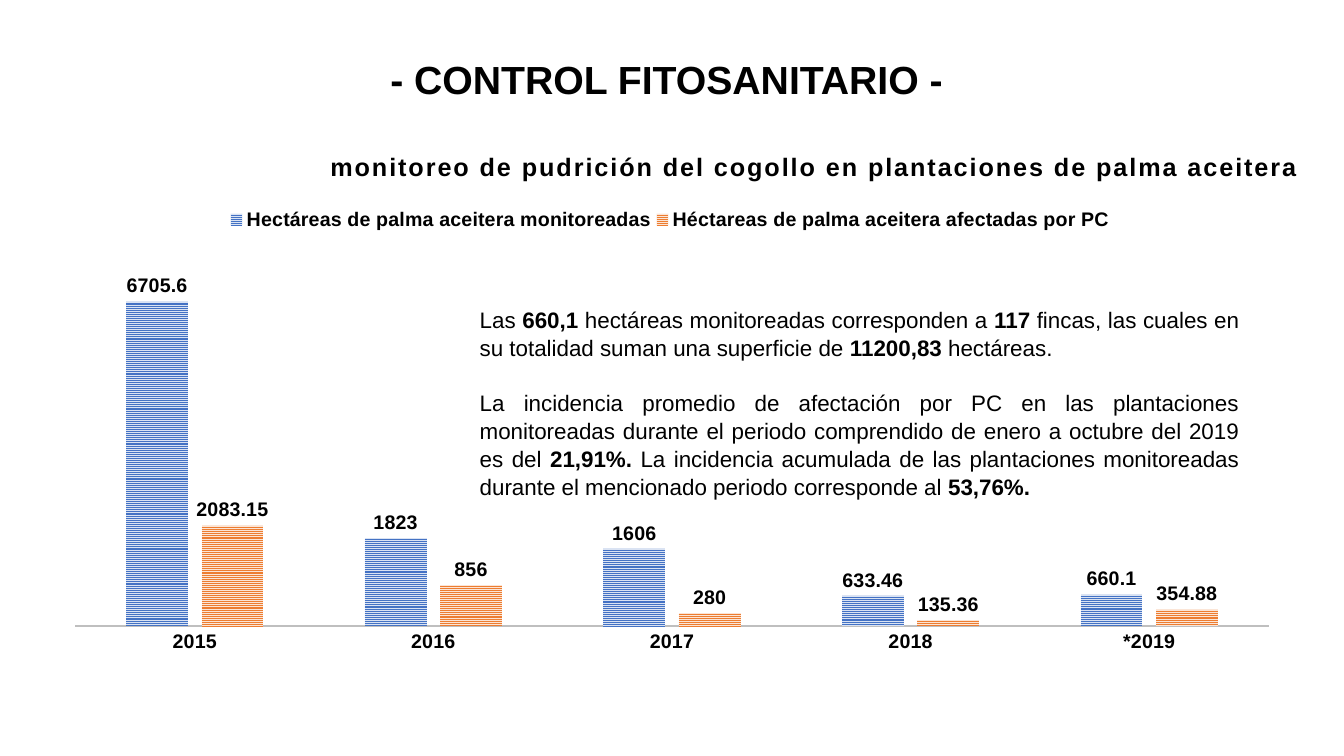
from lxml import etree
from pptx import Presentation
from pptx import util as u
from pptx.chart import data as chart_data
from pptx.dml.color import RGBColor
from pptx.enum import chart as ch, dml, text
from pptx.oxml import ns

BLACK = RGBColor(0x00, 0x00, 0x00)
AXIS_GREY = RGBColor(0xBF, 0xBF, 0xBF)
BLUE = RGBColor(0x44, 0x72, 0xC4)
PALE_BLUE = RGBColor(0xDA, 0xE3, 0xF3)
ORANGE = RGBColor(0xED, 0x7D, 0x31)
PALE_ORANGE = RGBColor(0xFB, 0xE5, 0xD6)

YEARS = ["2015", "2016", "2017", "2018", "*2019"]
HECTARES = [
    ("Hectáreas de palma aceitera monitoreadas",
     [6705.6, 1823, 1606, 633.46, 660.1], BLUE, PALE_BLUE),
    ("Héctareas de palma aceitera afectadas por PC",
     [2083.15, 856, 280, 135.36, 354.88], ORANGE, PALE_ORANGE),
]
FINDINGS = [
    [("Las ", False), ("660,1", True),
     (" hectáreas monitoreadas corresponden a ", False), ("117", True),
     (" fincas, las cuales en su totalidad suman una superficie de ", False),
     ("11200,83", True), (" hectáreas.", False)],
    [("La incidencia promedio de afectación por PC en las plantaciones "
      "monitoreadas durante el periodo comprendido de enero a octubre del 2019 es del ", False),
     ("21,91%. ", True),
     ("La incidencia acumulada de las plantaciones monitoreadas durante el "
      "mencionado periodo corresponde al ", False),
     ("53,76%.", True)],
]


def style_font(font, size, bold=True):
    """Apply the slide's black Arial at the given size."""
    font.name = "Arial"
    font.size = u.Pt(size)
    font.bold = bold
    font.color.rgb = BLACK


def add_text(slide, box, paragraphs, size, alignment, line_spacing=1.0, gap=0):
    """Write paragraphs of (wording, bold) runs in a wrapping box."""
    frame = slide.shapes.add_textbox(*map(u.Inches, box)).text_frame
    frame.word_wrap = True
    for position, runs in enumerate(paragraphs):
        paragraph = frame.add_paragraph() if position else frame.paragraphs[0]
        paragraph.alignment = alignment
        paragraph.line_spacing = line_spacing
        if position:
            paragraph.space_before = u.Pt(gap)
        for wording, bold in runs:
            run = paragraph.add_run()
            run.text = wording
            style_font(run.font, size, bold)


def set_layout(part, index, inner=False, **fractions):
    """Fix a chart part at fractions of the chart's width and height."""
    for old_layout in part.findall(ns.qn("c:layout")):
        part.remove(old_layout)
    layout = etree.Element(ns.qn("c:layout"))
    manual = etree.SubElement(layout, ns.qn("c:manualLayout"))
    settings = [("layoutTarget", "inner")] if inner else []
    settings += [("xMode", "edge"), ("yMode", "edge"), *fractions.items()]
    for tag, setting in settings:
        etree.SubElement(manual, ns.qn(f"c:{tag}")).set("val", str(setting))
    part.insert(index, layout)


def add_heading(slide, box):
    """Add the centred slide heading."""
    add_text(slide, box, [[("- CONTROL FITOSANITARIO - ", True)]], 28,
             text.PP_ALIGN.CENTER)


def add_findings(slide, box):
    """Add the justified findings on monitored and affected plantations."""
    add_text(slide, box, FINDINGS, 16, text.PP_ALIGN.JUSTIFY, 1.04, 19)


def add_monitoring_chart(slide, box):
    """Add the yearly columns of monitored and affected hectares."""
    yearly = chart_data.CategoryChartData()
    yearly.categories = YEARS
    for name, hectares, _, _ in HECTARES:
        yearly.add_series(name, hectares)
    chart = slide.shapes.add_chart(
        ch.XL_CHART_TYPE.COLUMN_CLUSTERED, *map(u.Inches, box), yearly).chart
    style_font(chart.font, 10, False)
    background = etree.Element(ns.qn("c:spPr"))
    etree.SubElement(background, ns.qn("a:noFill"))
    etree.SubElement(etree.SubElement(background, ns.qn("a:ln")), ns.qn("a:noFill"))
    chart.element.find(ns.qn("c:chart")).addnext(background)

    chart.has_title = True
    subject = chart.chart_title.text_frame.paragraphs[0].add_run()
    subject.text = "monitoreo de pudrición del cogollo en plantaciones de palma aceitera"
    style_font(subject.font, 18)
    subject.font._element.set("spc", "140")
    set_layout(chart.chart_title.element if hasattr(chart.chart_title, "element")
               else chart.chart_title._element, 1, x=0.22, y=0.02)

    chart.has_legend = True
    chart.legend.position = ch.XL_LEGEND_POSITION.TOP
    chart.legend.include_in_layout = False
    style_font(chart.legend.font, 14)
    set_layout(chart.legend._element, 1, x=0.14, y=0.13, w=0.71, h=0.06)

    plot = chart.plots[0]
    plot.gap_width = 164
    plot.overlap = -22
    plot.vary_by_categories = False
    for series, (_, _, stripe, ground) in zip(plot.series, HECTARES):
        series.invert_if_negative = False
        fill = series.format.fill
        fill.patterned()
        fill.pattern = dml.MSO_PATTERN.NARROW_HORIZONTAL
        fill.fore_color.rgb = stripe
        fill.back_color.rgb = ground
        series.format.line.fill.background()
        labels = series.data_labels
        labels.show_value = True
        labels.position = ch.XL_LABEL_POSITION.OUTSIDE_END
        style_font(labels.font, 14)

    years = chart.category_axis
    years.major_tick_mark = ch.XL_TICK_MARK.NONE
    years.format.line.color.rgb = AXIS_GREY
    years.format.line.width = u.Pt(1.5)
    style_font(years.tick_labels.font, 14)
    scale = chart.value_axis
    scale.minimum_scale = 0
    scale.maximum_scale = 8000
    scale.has_major_gridlines = False
    scale.visible = False
    set_layout(chart.element.find(".//" + ns.qn("c:plotArea")), 0, inner=True,
               x=0.02, y=0.195, w=0.953, h=0.735)


def main():
    """Build and save the slide."""
    deck = Presentation()
    deck.slide_width = u.Inches(13.33)
    deck.slide_height = u.Inches(7.5)
    slide = deck.slides.add_slide(deck.slide_layouts[6])
    add_findings(slide, (4.66, 2.98, 7.73, 2.26))
    add_heading(slide, (0.5, 0.5, 12.33, 0.57))
    add_monitoring_chart(slide, (0.5, 1.34, 12.42, 5.24))
    deck.save("out.pptx")


if __name__ == "__main__":
    main()
